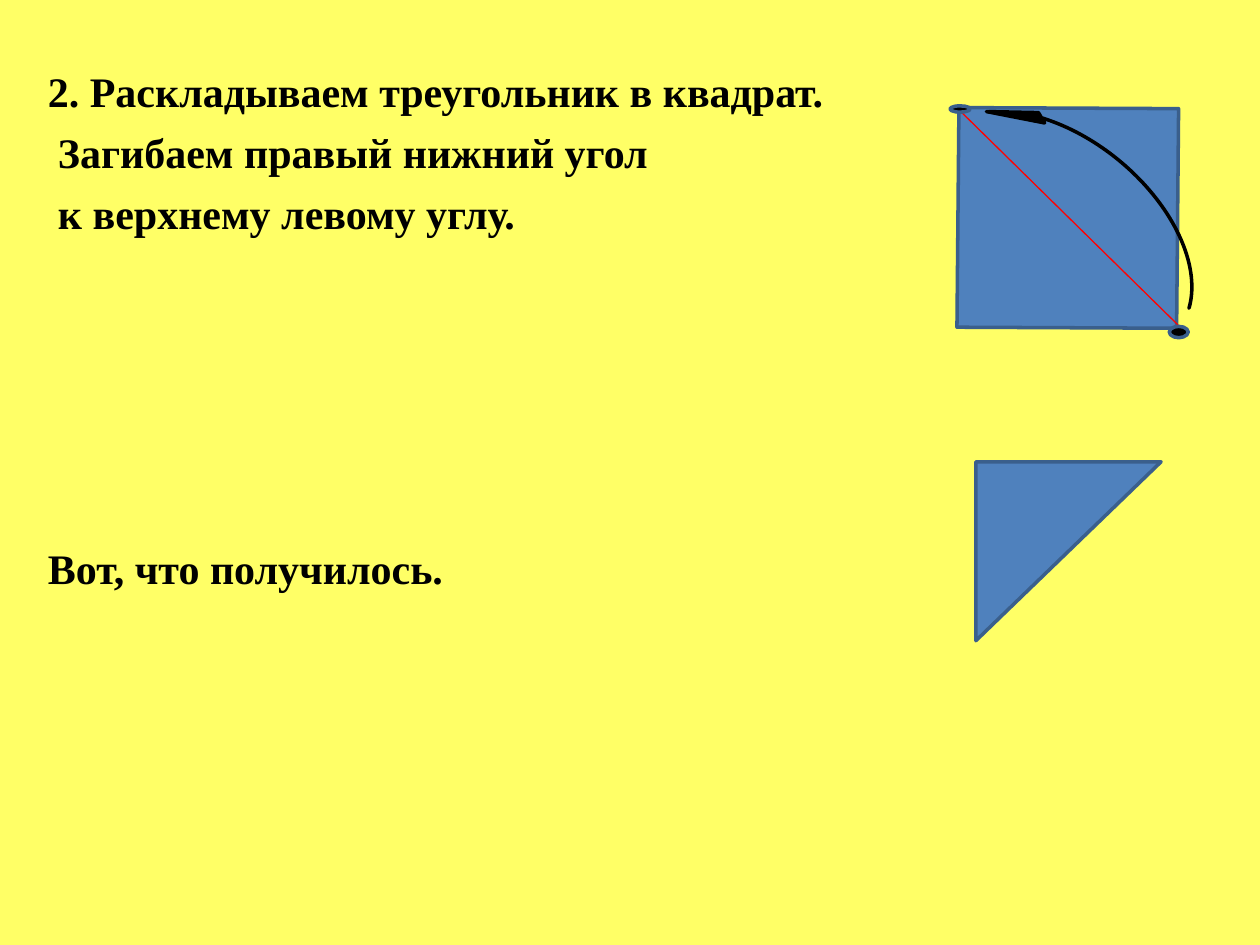
from dataclasses import dataclass
from pptx import Presentation
from pptx.dml.color import RGBColor
from pptx.enum.shapes import MSO_CONNECTOR, MSO_SHAPE
from pptx.oxml.ns import qn
from pptx.slide import Slide
from pptx.util import Inches, Pt

COLORS = {"background": "FFFF66", "paper": "4F81BD", "edge": "3A5F8C",
          "ink": "000000", "fold": "FF0000"}


@dataclass
class FoldingSlide:
    """Style and drawing methods for one paper folding step."""
    slide: Slide
    font_name: str = "Times New Roman"
    font_size: int = 24
    line_width: float = 2

    def color(self, name):
        return RGBColor.from_string(COLORS[name])

    def background(self):
        fill = self.slide.background.fill
        fill.solid()
        fill.fore_color.rgb = self.color("background")

    def body(self, left, top, width, height, lines):
        self.slide.shapes.title.element.getparent().remove(self.slide.shapes.title.element)
        body = self.slide.placeholders[1]
        body.left, body.top, body.width, body.height = map(Inches, (left, top, width, height))
        frame = body.text_frame
        for number, (text, space_before, margin) in enumerate(lines):
            paragraph = frame.add_paragraph() if number else frame.paragraphs[0]
            paragraph.text = text
            paragraph.space_before = Pt(space_before)
            properties = paragraph._p.get_or_add_pPr()
            properties.set("marL", str(Inches(margin)))
            properties.set("indent", "0")
            properties.append(properties.makeelement(qn("a:buNone"), {}))
            font = paragraph.font
            font.name, font.size, font.bold = self.font_name, Pt(self.font_size), True
            font.color.rgb = self.color("ink")

    def shape(self, kind, left, top, width, height, fill, line="edge", rotation=0):
        shape = self.slide.shapes.add_shape(kind, *map(Inches, (left, top, width, height)))
        shape.rotation = rotation
        shape.shadow.inherit = False
        shape.fill.solid()
        shape.fill.fore_color.rgb = self.color(fill)
        shape.line.color.rgb = self.color(line)
        shape.line.width = Pt(self.line_width)
        return shape

    def corner_mark(self, left, top, width, height):
        self.shape(MSO_SHAPE.OVAL, left, top, width, height, "ink")

    def fold_line(self, *ends):
        connector = self.slide.shapes.add_connector(MSO_CONNECTOR.STRAIGHT, *map(Inches, ends))
        connector.line.color.rgb = self.color("fold")
        connector.line.width = Pt(0.75)
        properties = connector._element.spPr
        properties.append(properties.makeelement(qn("a:effectLst"), {}))

    def fold_arrow(self, left, top, width, height, rotation, adjustments):
        arrow = self.shape(MSO_SHAPE.CIRCULAR_ARROW, left, top, width, height,
                           "ink", "ink", rotation)
        for index, value in enumerate(adjustments):
            arrow.adjustments[index] = value
        arrow._element.spPr.find(qn("a:xfrm")).set("flipV", "1")


def main():
    presentation = Presentation()
    presentation.slide_width, presentation.slide_height = Inches(10), Inches(7.5)
    step = FoldingSlide(presentation.slides.add_slide(presentation.slide_layouts[1]))
    step.background()
    step.body(0.28, 0.47, 9.37, 6.75, [
        ("2. Раскладываем треугольник в квадрат.", 0, 0),
        ("Загибаем правый нижний угол", 6, 0.08),
        ("к верхнему левому углу.", 6, 0.08),
        ("Вот, что получилось.", 174, 0),
    ])
    step.shape(MSO_SHAPE.DIAMOND, 7.24, 0.5, 2.47, 2.46, "paper", rotation=315.4)
    step.fold_line(9.35, 2.58, 7.62, 0.88)
    step.corner_mark(7.54, 0.84, 0.16, 0.05)
    step.shape(MSO_SHAPE.RIGHT_TRIANGLE, 7.77, 3.64, 1.42, 1.47, "paper", rotation=90)
    step.corner_mark(9.28, 2.59, 0.15, 0.09)
    step.fold_arrow(7.13, 1.05, 2.54, 1.59, 219.1, (0, 13.42, 190.49, 113.44, 0.03))
    presentation.save("out.pptx")


if __name__ == "__main__":
    main()
